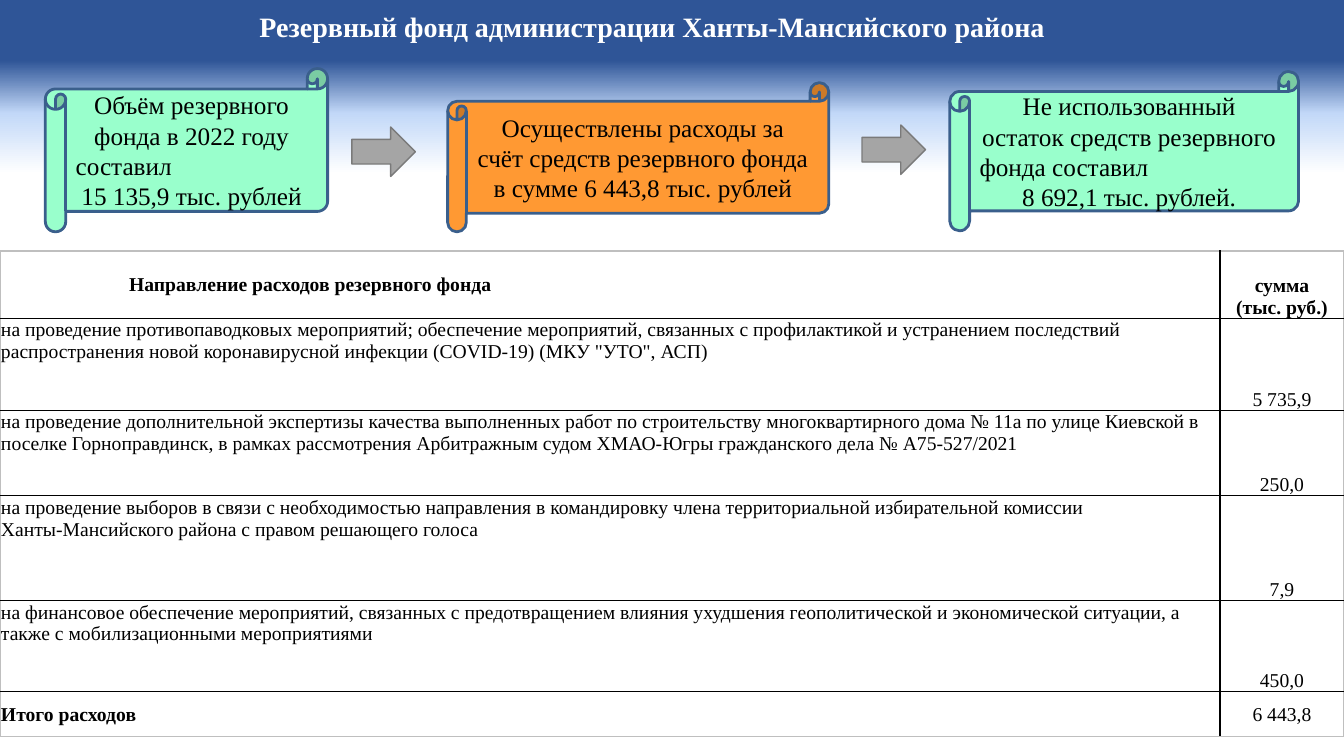
import lxml.etree
import pptx
import pptx.dml.color
import pptx.enum.shapes
import pptx.enum.text
import pptx.oxml.ns
import pptx.util
import copy

Inches = pptx.util.Inches
Pt = pptx.util.Pt
ALIGN = pptx.enum.text.PP_ALIGN
ANCHOR = pptx.enum.text.MSO_ANCHOR
SHAPE = pptx.enum.shapes.MSO_SHAPE
COLORS = {
    "navy": "2F5597", "sky": "C2D8F8", "white": "FFFFFF", "black": "000000",
    "mint": "99FFCC", "orange": "FF9933", "outline": "3A5F8C",
    "gray": "A5A5A5", "dark gray": "7A7A7A", "frame": "BFBFBF",
}


def rgb(name):
    return pptx.dml.color.RGBColor.from_string(COLORS[name])


def write(text_frame, lines, size, color="black", bold=False):
    for index, (text, alignment) in enumerate(lines):
        paragraph = text_frame.paragraphs[0] if index == 0 else text_frame.add_paragraph()
        paragraph.alignment = alignment
        for part_index, part in enumerate(text.split("\n")):
            if part_index:
                paragraph.add_line_break()
            run = paragraph.add_run()
            run.text = part
            run.font.name = "Times New Roman"
            run.font.size = Pt(size)
            run.font.bold = bold
            run.font.color.rgb = rgb(color)


presentation = pptx.Presentation()
presentation.slide_width = Inches(13.33)
presentation.slide_height = Inches(7.5)
slide = presentation.slides.add_slide(presentation.slide_layouts[6])

background = slide.background.fill
background.gradient()
background.gradient_angle = 270
stop_list = background._fill._gradFill.gsLst
stop_list.append(copy.deepcopy(stop_list[-1]))
stops = [(0.08, "navy"), (0.15, "sky"), (0.23, "white")]
for stop, (position, color) in zip(background.gradient_stops, stops):
    stop.position = position
    stop.color.rgb = rgb(color)

title = slide.shapes.add_textbox(Inches(1.47), Inches(0.05), Inches(10), Inches(0.44))
title.text_frame.word_wrap = True
write(title.text_frame, [("Резервный фонд администрации Ханты-Мансийского района", ALIGN.CENTER)],
      20, "white", True)

scrolls = [
    (0.45, 0.68, 2.8, 1.62, "mint", [
        ("Объём резервного фонда в 2022 году", ALIGN.CENTER),
        ("составил", ALIGN.LEFT),
        ("15 135,9 тыс. рублей", ALIGN.CENTER)]),
    (4.44, 0.82, 3.78, 1.48, "orange", [
        ("Осуществлены расходы за счёт средств резервного фонда в сумме 6 443,8 тыс. рублей",
         ALIGN.CENTER)]),
    (9.42, 0.71, 3.46, 1.58, "mint", [
        ("Не использованный остаток средств резервного", ALIGN.CENTER),
        ("фонда составил", ALIGN.LEFT),
        ("8 692,1 тыс. рублей.", ALIGN.CENTER)]),
]
arrows = [(left, top, 0.63, 0.49, "gray", []) for left, top in [(3.49, 1.26), (8.55, 1.24)]]
for left, top, width, height, color, lines in scrolls + arrows:
    kind = SHAPE.HORIZONTAL_SCROLL if lines else SHAPE.RIGHT_ARROW
    shape = slide.shapes.add_shape(kind, Inches(left), Inches(top), Inches(width), Inches(height))
    shape.shadow.inherit = False
    shape.fill.solid()
    shape.fill.fore_color.rgb = rgb(color)
    shape.line.color.rgb = rgb("outline" if lines else "dark gray")
    shape.line.width = Pt(2 if lines else 1)
    shape.text_frame.word_wrap = True
    shape.text_frame.vertical_anchor = ANCHOR.MIDDLE
    write(shape.text_frame, lines, 18)

expenses = [
    (0.67, "Направление расходов резервного фонда", "сумма\t(тыс. руб.)"),
    (0.91, "на проведение противопаводковых мероприятий; обеспечение мероприятий, связанных "
           "с профилактикой и устранением последствий распространения новой коронавирусной "
           "инфекции (COVID-19) (МКУ \"УТО\", АСП)", "5 735,9"),
    (0.85, "на проведение дополнительной экспертизы качества выполненных работ по строительству "
           "многоквартирного дома № 11а по улице Киевской в поселке Горноправдинск, в рамках "
           "рассмотрения Арбитражным судом ХМАО-Югры гражданского дела № А75-527/2021", "250,0"),
    (1.04, "на проведение выборов в связи с необходимостью направления в командировку члена "
           "территориальной избирательной комиссии\n"
           "Ханты-Мансийского района с правом решающего голоса", "7,9"),
    (0.9, "на финансовое обеспечение мероприятий, связанных с предотвращением влияния ухудшения "
          "геополитической и экономической ситуации, а также с мобилизационными мероприятиями",
     "450,0"),
    (0.45, "Итого расходов", "6 443,8"),
]
last = len(expenses) - 1
table = slide.shapes.add_table(len(expenses), 2, Inches(0), Inches(2.49),
                               Inches(13.33), Inches(4.82)).table
table.columns[0].width = Inches(12.1)
table.columns[1].width = Inches(1.23)
for row, (height, purpose, amount) in enumerate(expenses):
    table.rows[row].height = Inches(height)
    for column, text in enumerate((purpose, amount)):
        cell = table.cell(row, column)
        cell.margin_left = cell.margin_right = cell.margin_top = Inches(0.01)
        cell.margin_bottom = Inches(0)
        if column == 0:
            cell.vertical_anchor = ANCHOR.MIDDLE if row in (0, last) else ANCHOR.TOP
        else:
            cell.vertical_anchor = ANCHOR.MIDDLE if row == last else ANCHOR.BOTTOM
        if row == 0 and column == 0:
            cell.margin_left = Inches(1.28)
        alignment = ALIGN.CENTER if column else ALIGN.LEFT
        bold = row == 0 or (row == last and column == 0)
        write(cell.text_frame, [(line, alignment) for line in text.split("\t")], 14, bold=bold)
        properties = cell._tc.get_or_add_tcPr()
        outer_edges = {"lnL": column == 0, "lnR": column == 1, "lnT": row == 0, "lnB": row == last}
        for edge, is_outer in outer_edges.items():
            border = lxml.etree.SubElement(properties, pptx.oxml.ns.qn("a:" + edge), w=str(Pt(1)))
            fill = lxml.etree.SubElement(border, pptx.oxml.ns.qn("a:solidFill"))
            lxml.etree.SubElement(fill, pptx.oxml.ns.qn("a:srgbClr"),
                                  val=COLORS["frame" if is_outer else "black"])
        cell.fill.background()

presentation.save("out.pptx")
